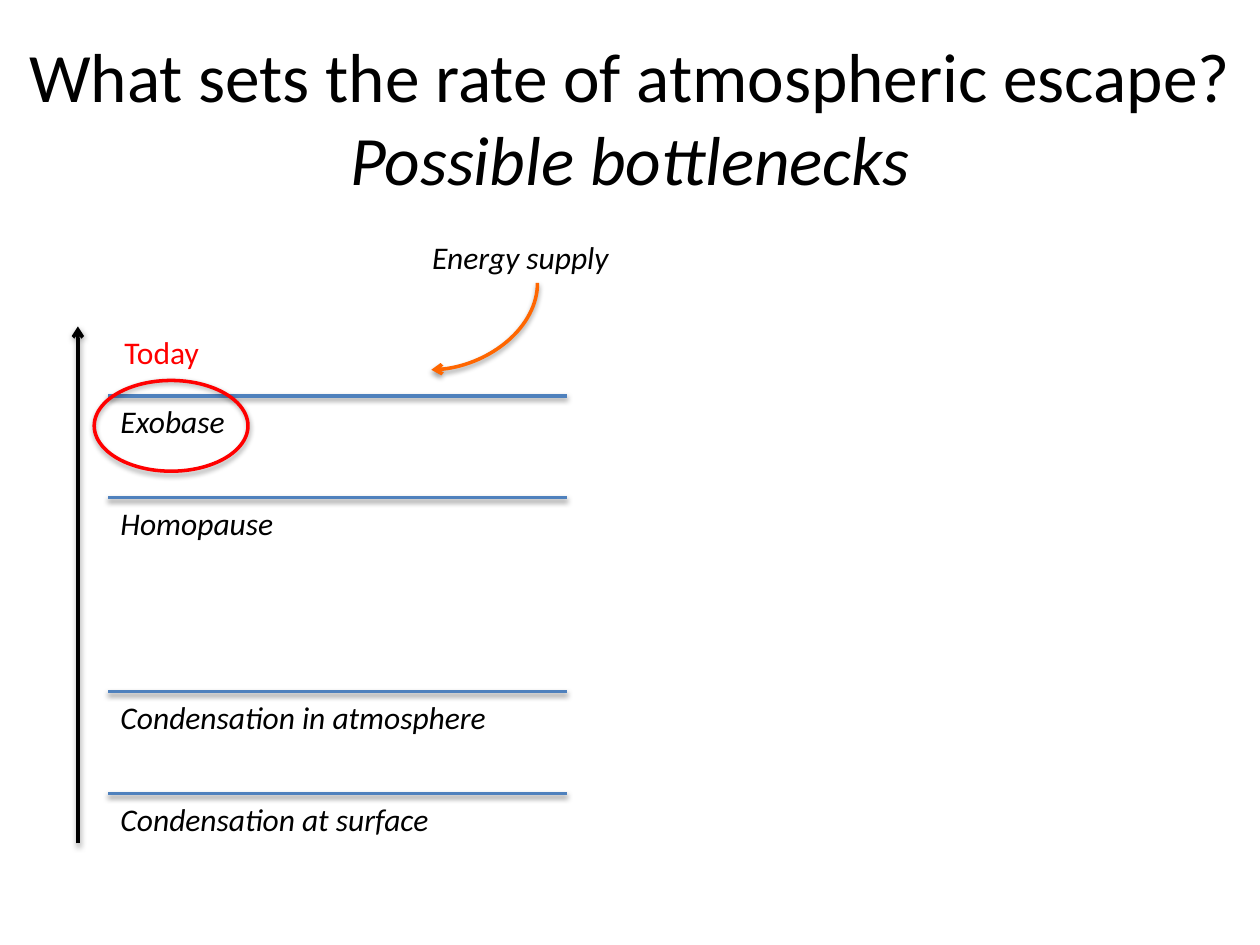
from dataclasses import dataclass

from lxml.etree import SubElement
from pptx import Presentation
from pptx.dml.color import RGBColor
from pptx.enum.shapes import MSO_CONNECTOR as Connector, MSO_SHAPE as Preset
from pptx.enum.text import MSO_ANCHOR as Anchor, PP_ALIGN as Align
from pptx.oxml.ns import qn
from pptx.util import Cm, Pt

TITLE = ("What sets the rate of atmospheric escape?", "Possible bottlenecks")
LEVELS = [
    ("Exobase", 7.98, 2.79),
    ("Homopause", 10.03, 3.78),
    ("Condensation in atmosphere", 13.94, 8.1),
    ("Condensation at surface", 16, 6.96),
]
LEVEL_LEFT, LEVEL_RIGHT = 2.18, 11.43
LABEL_HEIGHT = 1.02


@dataclass(frozen=True)
class Theme:
    font: str = "Calibri"
    title_size: float = 39.6
    label_size: float = 18
    line_width: float = 2
    text: str = "000000"
    level: str = "4F81BD"
    energy: str = "FF6600"
    today: str = "FF0000"


THEME = Theme()


def add_shadow(shape, opacity=38):
    """Give a shape a soft shadow that falls straight down."""
    effects = SubElement(shape._element.spPr, qn("a:effectLst"))
    shadow = SubElement(effects, qn("a:outerShdw"), blurRad=str(Pt(3.1)),
                        dist=str(Pt(1.6)), dir="5400000", rotWithShape="0")
    color = SubElement(shadow, qn("a:srgbClr"), val=THEME.text)
    SubElement(color, qn("a:alpha"), val=str(opacity * 1000))


def style_line(shape, color, arrow=False, opacity=38):
    """Set the outline, the optional arrowhead and the shadow."""
    shape.line.color.rgb = RGBColor.from_string(color)
    shape.line.width = Pt(THEME.line_width)
    if arrow:
        SubElement(shape.line._get_or_add_ln(), qn("a:tailEnd"), type="arrow")
    add_shadow(shape, opacity)


def add_line(slide, start, end, color, arrow=False, kind=Connector.STRAIGHT):
    """Draw a connector between two points."""
    line = slide.shapes.add_connector(kind, *map(Cm, (*start, *end)))
    style_line(line, color, arrow)
    return line


def style_font(paragraph, size, color=THEME.text, italic=None):
    """Set the font of a whole paragraph."""
    font = paragraph.font
    font.name, font.size, font.italic = THEME.font, Pt(size), italic
    font.color.rgb = RGBColor.from_string(color)


def add_label(slide, text, left, top, width, color=THEME.text, italic=True):
    """Place a one-line label."""
    box = slide.shapes.add_textbox(*map(Cm, (left, top, width, LABEL_HEIGHT)))
    box.text_frame.word_wrap = False
    paragraph = box.text_frame.paragraphs[0]
    paragraph.text = text
    style_font(paragraph, THEME.label_size, color, italic)


def add_title(slide):
    """Place the question with its italic second line."""
    box = slide.shapes.add_textbox(0, Cm(0.76), Cm(25.4), Cm(3.18))
    frame = box.text_frame
    frame.word_wrap, frame.vertical_anchor = True, Anchor.MIDDLE
    paragraph = frame.paragraphs[0]
    paragraph.alignment = Align.CENTER
    style_font(paragraph, THEME.title_size)
    question, subtitle = TITLE
    paragraph.add_run().text = question
    paragraph.add_line_break()
    run = paragraph.add_run()
    run.text, run.font.italic = subtitle, True


def add_energy_arrow(slide):
    """Draw the quarter-turn arrow from the energy label to the exobase."""
    arrow = add_line(slide, (8.89, 5.51), (10.64, 7.65), THEME.energy, True, Connector.CURVE)
    properties = arrow._element.spPr
    properties.find(qn("a:prstGeom")).set("prst", "curvedConnector2")
    properties.find(qn("a:xfrm")).set("rot", "5400000")


def main():
    """Build and save the slide."""
    presentation = Presentation()
    presentation.slide_width, presentation.slide_height = Cm(25.4), Cm(19.05)
    slide = presentation.slides.add_slide(presentation.slide_layouts[6])

    add_title(slide)
    for name, height, width in LEVELS:
        add_line(slide, (LEVEL_LEFT, height), (LEVEL_RIGHT, height), THEME.level)
        add_label(slide, name, LEVEL_LEFT, height, width)
    add_label(slide, "Energy supply", 8.46, 4.67, 4.27)
    add_line(slide, (1.57, 17), (1.57, 6.58), THEME.text, arrow=True)
    add_energy_arrow(slide)
    add_label(slide, "Today", 2.26, 6.58, 2.11, THEME.today, italic=None)

    ellipse = slide.shapes.add_shape(Preset.OVAL, Cm(1.9), Cm(7.67), Cm(3.1), Cm(1.83))
    ellipse.fill.background()
    style_line(ellipse, THEME.today, opacity=35)

    presentation.save("out.pptx")


if __name__ == "__main__":
    main()
